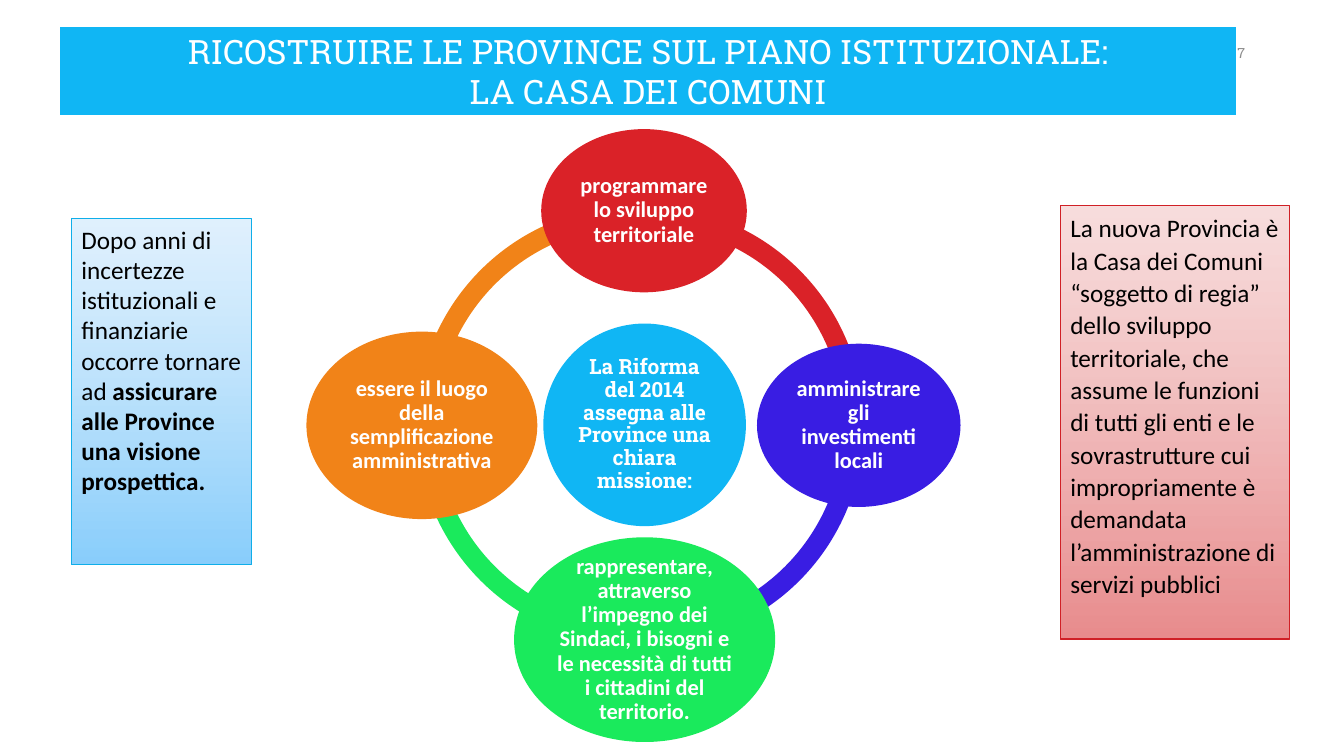
import pptx
import pptx.dml.color
import pptx.enum.shapes
import pptx.enum.text
import pptx.oxml.ns
import pptx.util
from lxml import etree

Pt = pptx.util.Pt
SHAPES = pptx.enum.shapes.MSO_SHAPE
ALIGN = pptx.enum.text.PP_ALIGN
ANCHOR = pptx.enum.text.MSO_ANCHOR

CYAN, RED, VIOLET = "10B6F4", "DA2228", "391DE3"
GREEN, ORANGE, WHITE = "1AEA5C", "F18318", "FFFFFF"


def colour(code):
    return pptx.dml.color.RGBColor.from_string(code)


class SlideBuilder:
    heading_font = "Roboto Slab"
    body_font = "Calibri"

    def __init__(self, deck):
        self.page = deck.slides.add_slide(deck.slide_layouts[5])

    def add_text(self, box, paragraphs, font, size, ink, align, anchor, inset=None):
        frame = box.text_frame
        frame.word_wrap = True
        frame.auto_size = pptx.enum.text.MSO_AUTO_SIZE.NONE
        frame.vertical_anchor = anchor
        if inset is not None:
            frame.margin_left = frame.margin_right = Pt(inset)
            frame.margin_top = frame.margin_bottom = Pt(inset)
        for index, spans in enumerate(paragraphs):
            para = frame.add_paragraph() if index else frame.paragraphs[0]
            para.alignment = align
            for text, bold in spans:
                span = para.add_run()
                span.text = text
                span.font.name = font
                span.font.size = Pt(size)
                span.font.bold = bold
                span.font.color.rgb = colour(ink)
        return frame

    def title(self, bounds, lines):
        box = self.page.shapes.title
        box.left, box.top, box.width, box.height = map(Pt, bounds)
        box.fill.solid()
        box.fill.fore_color.rgb = colour(CYAN)
        box.line.color.rgb = colour(WHITE)
        box.line.width = Pt(2)
        self.add_text(box, [[(line, False)] for line in lines], self.heading_font,
                      24, WHITE, ALIGN.CENTER, ANCHOR.MIDDLE)

    def page_number(self, bounds, text):
        box = self.page.shapes.add_textbox(*map(Pt, bounds))
        self.add_text(box, [[(text, False)]], self.heading_font, 10, "8C8C8C",
                      ALIGN.RIGHT, ANCHOR.MIDDLE)

    def shape(self, kind, bounds, fill=None):
        shape = self.page.shapes.add_shape(kind, *map(Pt, bounds))
        shape.shadow.inherit = False
        if fill:
            shape.fill.solid()
            shape.fill.fore_color.rgb = colour(fill)
            shape.line.fill.background()
        return shape

    def arc(self, left, start, end, fill):
        shape = self.shape(SHAPES.BLOCK_ARC, (left, 146.9, 313.9, 313.9), fill)
        for index, value in enumerate((start, end, 0.046)):
            shape.adjustments[index] = value

    def circle(self, bounds, fill, text, font=body_font, size=16):
        shape = self.shape(SHAPES.OVAL, bounds, fill)
        frame = self.add_text(shape, [[(text, True)]], font, size, WHITE,
                              ALIGN.CENTER, ANCHOR.MIDDLE, inset=1.5)
        frame.paragraphs[0].line_spacing = 0.9

    def panel(self, bounds, stops, edge, spans, spacing=1.0):
        shape = self.shape(SHAPES.RECTANGLE, bounds)
        shape.fill.gradient()
        shape.fill.gradient_angle = 270
        for stop, (code, _) in zip(shape.fill.gradient_stops, stops):
            stop.color.rgb = colour(code)
        qn = pptx.oxml.ns.qn
        tints = shape.element.spPr.iter(qn("a:srgbClr"))
        for tint, (_, opacity) in zip(tints, stops):
            etree.SubElement(tint, qn("a:alpha"), val=str(opacity * 1000))
        shape.line.color.rgb = colour(edge)
        shape.line.width = Pt(0.75)
        frame = self.add_text(shape, [spans], self.body_font, 18, "000000",
                              ALIGN.LEFT, ANCHOR.TOP)
        frame.paragraphs[0].line_spacing = spacing


def main():
    deck = pptx.Presentation()
    deck.slide_width, deck.slide_height = Pt(960), Pt(540)
    slide = SlideBuilder(deck)

    slide.title((42, 18, 842, 65.5),
                ["RICOSTRUIRE LE PROVINCE SUL PIANO ISTITUZIONALE:",
                 "LA CASA DEI COMUNI"])
    slide.page_number((824.5, 25.2, 72, 25.2), "7")

    for arc in ((297.4, 107.98, 163.28, ORANGE),
                (297.4, 52.72, 108.02, GREEN),
                (303.1, 0, 54, VIOLET),
                (303.1, 162, 0, RED)):
        slide.arc(*arc)

    slide.circle((388.1, 231.1, 144.7, 144.7), CYAN,
                 "La Riforma del 2014 assegna alle Province una chiara missione:",
                 slide.heading_font, 15)
    missions = (
        ((386.6, 92.2, 146.9, 116.6), RED,
         "programmare lo sviluppo territoriale"),
        ((540.7, 245.5, 145.4, 116.6), VIOLET,
         "amministrare gli investimenti locali"),
        ((367.2, 383.8, 186.5, 146.2), GREEN,
         "rappresentare, attraverso l’impegno dei Sindaci, i bisogni e "
         "le necessità di tutti i cittadini del territorio."),
        ((218.9, 236.9, 164.9, 133.9), ORANGE,
         "essere il luogo della semplificazione amministrativa"),
    )
    for mission in missions:
        slide.circle(*mission)

    slide.panel((51.1, 156.4, 128.9, 247), (("CCE8FD", 60), ("7FCAFC", 92)), "0FAEE9",
                [("Dopo anni di incertezze istituzionali e finanziarie "
                  "occorre tornare ad ", False),
                 ("assicurare alle Province una visione prospettica.", True)])
    slide.panel((757.4, 146.9, 163.6, 309.6), (("F3C7C7", 60), ("E78283", 92)), "D02026",
                [("La nuova Provincia è la Casa dei Comuni “soggetto di regia” "
                  "dello sviluppo territoriale, che assume le funzioni di tutti "
                  "gli enti e le sovrastrutture cui impropriamente è demandata "
                  "l’amministrazione di servizi pubblici", False)], 1.07)

    deck.save("out.pptx")


if __name__ == "__main__":
    main()
